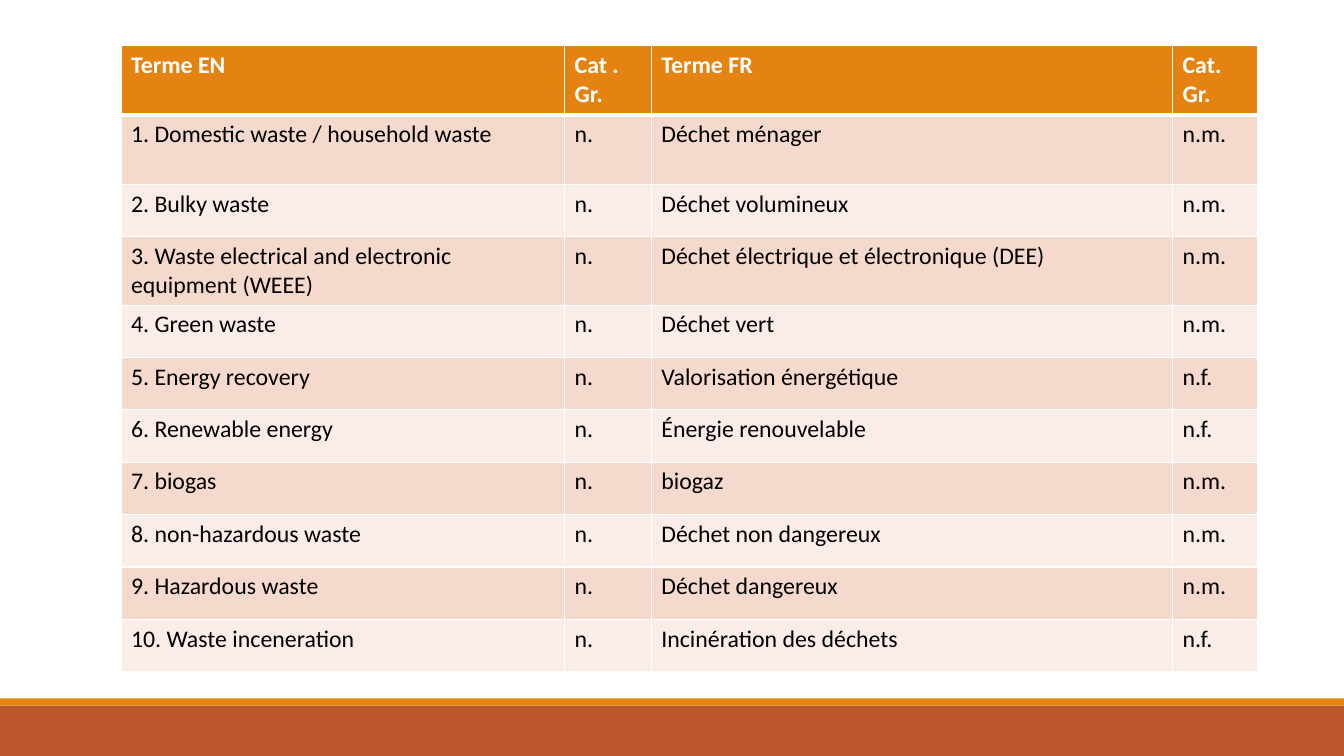
from lxml.etree import SubElement
from pptx import Presentation
from pptx.dml.color import RGBColor
from pptx.enum.shapes import MSO_SHAPE
from pptx.oxml.ns import qn
from pptx.util import Inches, Pt

COLORS = {
    "orange": "E48312",
    "rust": "BD582C",
    "odd_row": "F5D9CC",
    "even_row": "FAEDE7",
    "white": "FFFFFF",
    "black": "000000",
}
PAGE_WIDTH, PAGE_HEIGHT = 13.33, 7.5
COLUMN_WIDTHS = [4.4, 0.86, 5.17, 0.84]
ROW_HEIGHTS = [0.69, 0.69, 0.52, 0.64] + [0.52] * 7
HEADINGS = ["Terme EN", "Cat . Gr.", "Terme FR", "Cat. Gr."]
TERMS = [
    ("Domestic waste / household waste", "Déchet ménager", "n.m."),
    ("Bulky waste", "Déchet volumineux", "n.m."),
    ("Waste electrical and electronic equipment (WEEE)",
     "Déchet électrique et électronique (DEE)", "n.m."),
    ("Green waste", "Déchet vert", "n.m."),
    ("Energy recovery", "Valorisation énergétique", "n.f."),
    ("Renewable energy", "Énergie renouvelable", "n.f."),
    ("biogas", "biogaz", "n.m."),
    ("non-hazardous waste", "Déchet non dangereux", "n.m."),
    ("Hazardous waste", "Déchet dangereux", "n.m."),
    ("Waste inceneration", "Incinération des déchets", "n.f."),
]


def rgb(name):
    """Return the named palette colour."""
    return RGBColor.from_string(COLORS[name])


def write_text(frame, text, size=17, color="black", bold=False, font="Calibri"):
    """Write one formatted run into a text frame."""
    span = frame.paragraphs[0].add_run()
    span.text = text
    span.font.name = font
    span.font.size = Pt(size)
    span.font.bold = bold
    span.font.color.rgb = rgb(color)


def set_borders(cell, bottom_width=1):
    """Draw white borders around a table cell."""
    properties = cell._tc.get_or_add_tcPr()
    widths = {"a:lnL": 1, "a:lnR": 1, "a:lnT": 1, "a:lnB": bottom_width}
    for side, width in widths.items():
        line = SubElement(properties, qn(side), w=str(Pt(width)))
        fill = SubElement(line, qn("a:solidFill"))
        SubElement(fill, qn("a:srgbClr"), val=COLORS["white"])


def add_band(page, left, top, width, height, color):
    """Add a plain filled rectangle."""
    band = page.shapes.add_shape(
        MSO_SHAPE.RECTANGLE, Inches(left), Inches(top), Inches(width), Inches(height))
    band.shadow.inherit = False
    band.fill.solid()
    band.fill.fore_color.rgb = rgb(color)
    band.line.fill.background()


def add_footer(page, left, top, width, height, stripe=0.07):
    """Add the rust footer with its orange stripe on top."""
    add_band(page, left, top + stripe, width, height - stripe, "rust")
    add_band(page, left, top, width, stripe, "orange")


def add_glossary(page, left, top):
    """Add the bilingual table of waste terms."""
    rows = [HEADINGS]
    for number, (english, french, category) in enumerate(TERMS, 1):
        rows.append([f"{number}. {english}", "n.", french, category])
    table = page.shapes.add_table(
        len(rows), len(HEADINGS), Inches(left), Inches(top),
        Inches(sum(COLUMN_WIDTHS)), Inches(sum(ROW_HEIGHTS))).table
    for column, width in zip(table.columns, COLUMN_WIDTHS):
        column.width = Inches(width)
    for row_index, (texts, height) in enumerate(zip(rows, ROW_HEIGHTS)):
        header = row_index == 0
        row_color = "orange" if header else ("even_row", "odd_row")[row_index % 2]
        table.rows[row_index].height = Inches(height)
        for column_index, text in enumerate(texts):
            cell = table.cell(row_index, column_index)
            set_borders(cell, bottom_width=3 if header else 1)
            cell.fill.solid()
            cell.fill.fore_color.rgb = rgb(row_color)
            write_text(cell.text_frame, text, bold=header,
                       color="white" if header else "black")


def main():
    """Build and save the glossary slide."""
    deck = Presentation()
    deck.slide_width = Inches(PAGE_WIDTH)
    deck.slide_height = Inches(PAGE_HEIGHT)
    page = deck.slides.add_slide(deck.slide_layouts[6])
    add_footer(page, 0, 6.93, PAGE_WIDTH, 0.57)
    add_glossary(page, 1.2, 0.45)
    deck.save("out.pptx")


if __name__ == "__main__":
    main()
